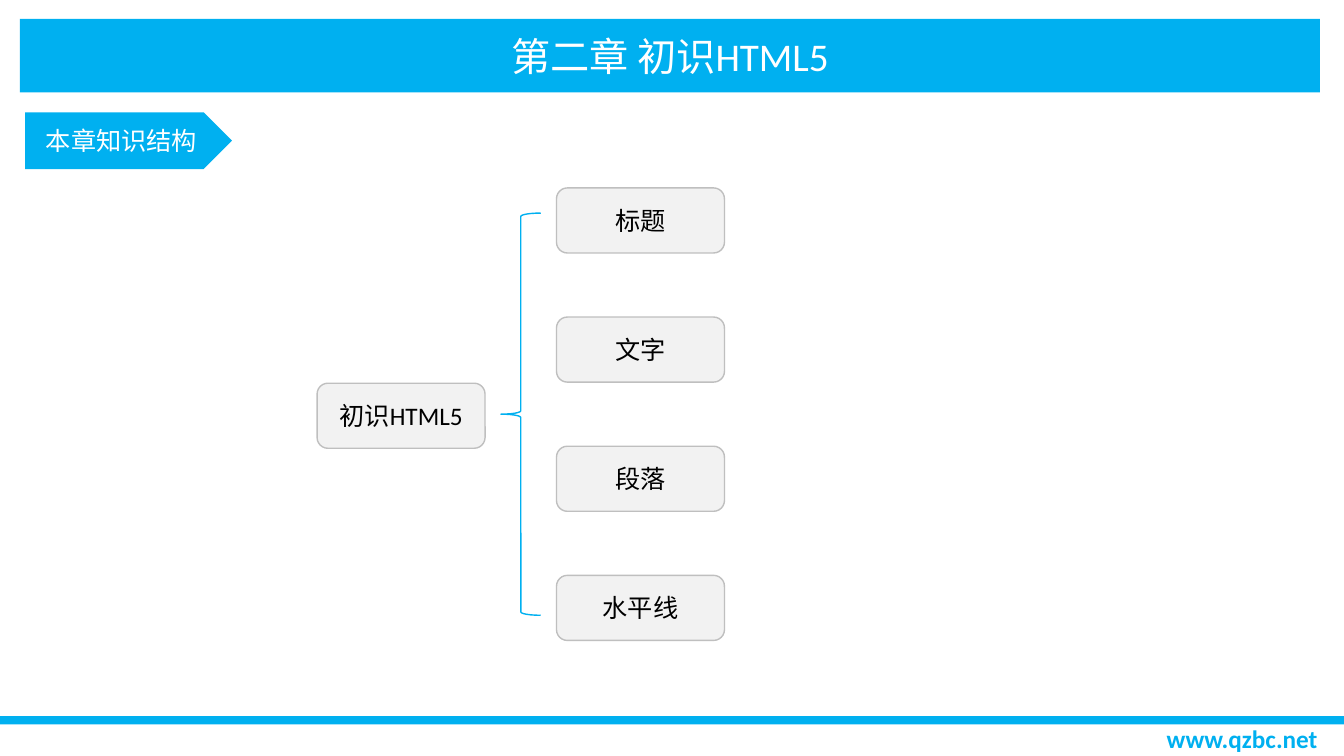
from lxml import etree
from pptx import Presentation
from pptx.dml.color import RGBColor
from pptx.enum.shapes import MSO_SHAPE
from pptx.enum.text import MSO_ANCHOR, MSO_AUTO_SIZE, PP_ALIGN
from pptx.oxml.ns import qn
from pptx.util import Emu, Pt

ROUNDED = MSO_SHAPE.ROUNDED_RECTANGLE
RECTANGLE = MSO_SHAPE.RECTANGLE
PENTAGON = MSO_SHAPE.PENTAGON
LEFT_BRACE = MSO_SHAPE.LEFT_BRACE
MIDDLE = MSO_ANCHOR.MIDDLE
CENTER = PP_ALIGN.CENTER
FIXED_SIZE = MSO_AUTO_SIZE.NONE
GROW = MSO_AUTO_SIZE.SHAPE_TO_FIT_TEXT

EMU_PER_PX = 9525
SLIDE_WIDTH, SLIDE_HEIGHT = 1280, 720
TITLE_ONLY = 5


def px(length):
    return Emu(length * EMU_PER_PX)


def color(value):
    return RGBColor.from_string(value)


class ChapterSlide:
    FONT = "Calibri"
    ACCENT = "00B0F0"
    NODE_FILL = "F2F2F2"
    NODE_LINE = "BFBFBF"
    WHITE = "FFFFFF"
    BLACK = "000000"

    def __init__(self, slide):
        self.slide = slide

    def label(self, frame, text, size, ink, bold=False):
        paragraph = frame.paragraphs[0]
        paragraph.alignment = CENTER
        run = paragraph.add_run()
        run.text = text
        run.font.name = self.FONT
        run.font.size = Pt(size)
        run.font.bold = bold
        run.font.color.rgb = color(ink)

    def title(self, text, left, top, width, height):
        banner = self.slide.shapes.title
        banner.left, banner.top = px(left), px(top)
        banner.width, banner.height = px(width), px(height)
        outline = etree.SubElement(banner.element.spPr, qn("a:prstGeom"), prst="roundRect")
        etree.SubElement(outline, qn("a:avLst"))
        banner.fill.solid()
        banner.fill.fore_color.rgb = color(self.ACCENT)
        frame = banner.text_frame
        frame.auto_size = FIXED_SIZE
        frame.vertical_anchor = MIDDLE
        self.label(frame, text, 28, self.WHITE)

    def shape(self, kind, left, top, width, height, fill=None, line=None):
        shape = self.slide.shapes.add_shape(kind, px(left), px(top), px(width), px(height))
        shape.shadow.inherit = False
        if fill:
            shape.fill.solid()
            shape.fill.fore_color.rgb = color(fill)
        else:
            shape.fill.background()
        if line:
            shape.line.color.rgb = color(line)
            shape.line.width = Pt(1)
        else:
            shape.line.fill.background()
        return shape

    def bar(self, left, top, width, height):
        self.shape(RECTANGLE, left, top, width, height, fill=self.ACCENT)

    def tag(self, text, left, top, width, height):
        tag = self.shape(PENTAGON, left, top, width, height, fill=self.ACCENT)
        tag.text_frame.vertical_anchor = MIDDLE
        self.label(tag.text_frame, text, 18, self.WHITE)

    def node(self, text, left, top, width=160, height=62):
        node = self.shape(ROUNDED, left, top, width, height, self.NODE_FILL, self.NODE_LINE)
        node.text_frame.vertical_anchor = MIDDLE
        self.label(node.text_frame, text, 18, self.BLACK)

    def brace(self, left, top, width, height):
        self.shape(LEFT_BRACE, left, top, width, height, line=self.ACCENT)

    def site(self, text, left, top, width, height):
        site = self.slide.shapes.add_textbox(px(left), px(top), px(width), px(height))
        site.text_frame.word_wrap = False
        site.text_frame.auto_size = GROW
        self.label(site.text_frame, text, 18, self.ACCENT, bold=True)


def main():
    deck = Presentation()
    deck.slide_width, deck.slide_height = px(SLIDE_WIDTH), px(SLIDE_HEIGHT)
    chapter = ChapterSlide(deck.slides.add_slide(deck.slide_layouts[TITLE_ONLY]))

    chapter.title("第二章 初识HTML5", 19, 18, 1238, 70)
    chapter.site("www.qzbc.net", 1101, 684, 164, 38)
    chapter.bar(0, 682, SLIDE_WIDTH, 8)
    chapter.tag("本章知识结构", 24, 107, 197, 54)

    chapter.node("初识HTML5", 302, 365)
    chapter.brace(477, 203, 38, 383)
    topics_top, topic_pitch = 179, 123
    for index, topic in enumerate(["标题", "文字", "段落", "水平线"]):
        chapter.node(topic, 530, topics_top + index * topic_pitch)

    deck.save("out.pptx")


if __name__ == "__main__":
    main()
